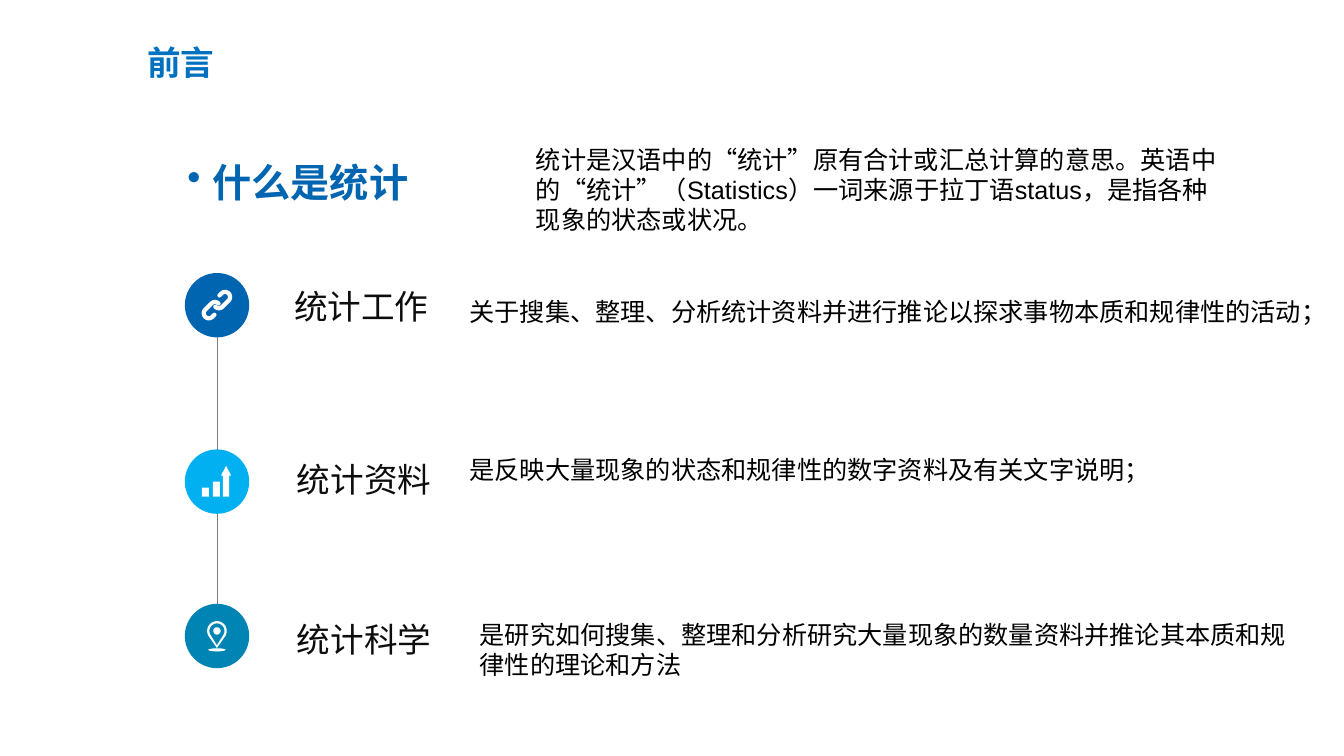
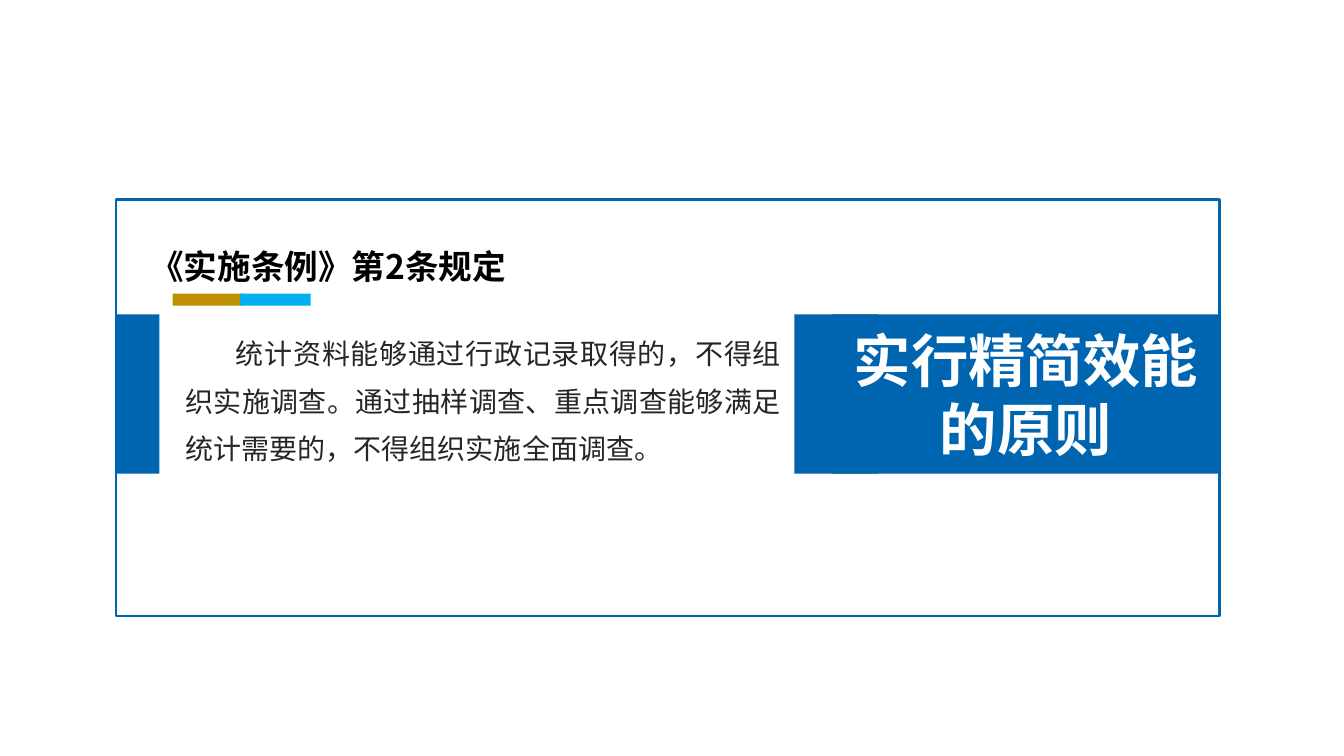
from dataclasses import dataclass
from math import cos, radians, sin
from typing import Callable

from lxml import etree
from pptx import Presentation
from pptx import util as u
from pptx.dml.color import RGBColor
from pptx.enum import shapes, text
from pptx.oxml import ns

Point = tuple[float, float]
Contour = list[Point]


@dataclass(frozen=True)
class Theme:
    blue: str = "0065B0"
    heading_blue: str = "0070C0"
    sky: str = "00B0F0"
    teal: str = "0084B4"
    gold: str = "BF9000"
    white: str = "FFFFFF"
    black: str = "000000"
    ink: str = "0D0D0D"
    soft_ink: str = "262626"
    grey: str = "808080"
    cjk_font: str = "Noto Sans CJK SC"
    latin_font: str = "Arial"
    body_size: float = 18
    article_size: float = 20
    label_size: float = 24
    topic_size: float = 28
    banner_size: float = 41


THEME = Theme()


@dataclass(frozen=True)
class Box:
    left: float
    top: float
    width: float
    height: float

    def lengths(self) -> list[u.Length]:
        return [u.Pt(v) for v in (self.left, self.top, self.width, self.height)]


@dataclass(frozen=True)
class TextStyle:
    size: float
    color: str
    bold: bool = False
    font: str = THEME.cjk_font
    align: text.PP_ALIGN = text.PP_ALIGN.LEFT
    line_spacing: float = 1.0
    left_margin: float = 0
    indent: float = 0
    bullet: str = ""
    wrap: bool = True
    grow: bool = True
    anchor: text.MSO_ANCHOR = text.MSO_ANCHOR.TOP
    inset: Point = (7.2, 3.6)


JUSTIFY = text.PP_ALIGN.JUSTIFY
MIDDLE = text.MSO_ANCHOR.MIDDLE
HEADING = TextStyle(THEME.label_size, THEME.heading_blue, bold=True)
TOPIC = TextStyle(THEME.topic_size, THEME.blue, bold=True, line_spacing=0.9,
                  left_margin=18, indent=-18, bullet="•", grow=False)
LABEL = TextStyle(THEME.label_size, THEME.ink, align=JUSTIFY, line_spacing=1.2)
LAST_LABEL = TextStyle(THEME.label_size, THEME.ink)
BODY = TextStyle(THEME.body_size, THEME.black, font=THEME.latin_font)
ONE_LINE = TextStyle(THEME.body_size, THEME.black, font=THEME.latin_font, wrap=False)
ARTICLE_TITLE = TextStyle(THEME.label_size, THEME.black, bold=True, align=JUSTIFY,
                          line_spacing=1.3, inset=(9.4, 4.3))
ARTICLE = TextStyle(THEME.article_size, THEME.soft_ink, align=JUSTIFY, line_spacing=1.4,
                    indent=36, grow=False, anchor=MIDDLE, inset=(9.4, 5))
BANNER = TextStyle(THEME.banner_size, THEME.white, bold=True, align=text.PP_ALIGN.CENTER,
                   grow=False, anchor=MIDDLE, inset=(0, 0))


def rgb(color: str) -> RGBColor:
    return RGBColor.from_string(color)


def write(shape, words: str, style: TextStyle) -> None:
    frame = shape.text_frame
    frame.word_wrap = style.wrap
    frame.auto_size = (text.MSO_AUTO_SIZE.SHAPE_TO_FIT_TEXT if style.grow
                       else text.MSO_AUTO_SIZE.NONE)
    frame.vertical_anchor = style.anchor
    frame.margin_left = frame.margin_right = u.Pt(style.inset[0])
    frame.margin_top = frame.margin_bottom = u.Pt(style.inset[1])

    para = frame.paragraphs[0]
    para.alignment = style.align
    para.line_spacing = style.line_spacing
    properties = para._p.get_or_add_pPr()
    properties.set("marL", str(u.Pt(style.left_margin)))
    properties.set("indent", str(u.Pt(style.indent)))
    if style.bullet:
        etree.SubElement(properties, ns.qn("a:buChar")).set("char", style.bullet)

    span = para.add_run()
    span.text = words
    span.font.size = u.Pt(style.size)
    span.font.bold = style.bold
    span.font.color.rgb = rgb(style.color)
    span.font.name = style.font
    east_asian = etree.SubElement(span._r.get_or_add_rPr(), ns.qn("a:ea"))
    east_asian.set("typeface", THEME.cjk_font)


def add_text(page, box: Box, words: str, style: TextStyle) -> None:
    write(page.shapes.add_textbox(*box.lengths()), words, style)


def paint(shape, fill: str = "", line: str = "", line_width: float = 1) -> None:
    """Apply plain fill and line; an empty colour means none."""
    shape.shadow.inherit = False
    if fill:
        shape.fill.solid()
        shape.fill.fore_color.rgb = rgb(fill)
    else:
        shape.fill.background()
    if line:
        shape.line.color.rgb = rgb(line)
        shape.line.width = u.Pt(line_width)
    else:
        shape.line.fill.background()


def add_block(page, box: Box, fill: str = "", line: str = "", line_width: float = 1,
              kind: shapes.MSO_SHAPE = shapes.MSO_SHAPE.RECTANGLE):
    block = page.shapes.add_shape(kind, *box.lengths())
    paint(block, fill, line, line_width)
    return block


def add_outline(page, center: Point, contours: list[Contour], close: bool = True):
    """Build one freeform from contours given relative to center."""
    placed = [[(u.Pt(center[0] + x), u.Pt(center[1] + y)) for x, y in contour]
              for contour in contours]
    builder = page.shapes.build_freeform(*placed[0][0], scale=1.0)
    for index, contour in enumerate(placed):
        if index:
            builder.move_to(*contour[0])
        builder.add_line_segments(contour[1:], close=close)
    return builder.convert_to_shape()


def arc(center: Point, radius_x: float, radius_y: float, start: int, end: int) -> Contour:
    """Points every 10 degrees, clockwise from the right."""
    return [(center[0] + radius_x * cos(radians(angle)),
             center[1] + radius_y * sin(radians(angle)))
            for angle in range(start, end + 1, 10)]


def draw_link(page, center: Point) -> None:
    lower = [(-1.8, 6.9), *arc((-5.8, 5.8), 3.6, 3.6, 45, 225),
             *arc((-1.4, 1.4), 3.6, 3.6, 225, 315)]
    upper = [(-x, -y) for x, y in lower]
    link = add_outline(page, center, [lower, upper], close=False)
    paint(link, line=THEME.white, line_width=3)
    outline = link.line._get_or_add_ln()
    outline.set("cap", "rnd")
    etree.SubElement(outline, ns.qn("a:round"))


def draw_growth(page, center: Point) -> None:
    base = 10.8
    bars = [[(left, top), (left + 5, top), (left + 5, base), (left, base)]
            for left, top in ((-10.8, 4.3), (-2.9, 0))]
    arrow = [(4.3, base), (4.3, -4.3), (2.9, -4.3), (6.5, -11.2),
             (10.1, -4.3), (8.7, -4.3), (8.7, base)]
    paint(add_outline(page, center, [*bars, arrow]), THEME.white)


def draw_pin(page, center: Point) -> None:
    head = (0, -3.6)
    contours = [
        [*arc(head, 7, 7, 150, 390), (0, 8.6)],
        [*arc(head, 5.4, 5.4, 150, 390), (0, 6.6)],
        arc(head, 2.6, 2.6, 0, 350),
        arc((0, 9.9), 6.2, 1.1, 0, 350),
    ]
    paint(add_outline(page, center, contours), THEME.white)


@dataclass(frozen=True)
class Meaning:
    label: str
    label_box: Box
    label_style: TextStyle
    disc_top: float
    color: str
    draw_icon: Callable
    detail: str
    detail_box: Box
    detail_style: TextStyle


DISC_SIZE = 46
DISC_LEFT = 132
MEANINGS = [
    Meaning("统计工作", Box(203, 195, 645, 42), LABEL, 195, THEME.blue, draw_link,
            "关于搜集、整理、分析统计资料并进行推论以探求事物本质和规律性的活动；",
            Box(328.3, 208, 626.4, 29), ONE_LINE),
    Meaning("统计资料", Box(205, 318.2, 651, 36), LABEL, 321, THEME.sky, draw_growth,
            "是反映大量现象的状态和规律性的数字资料及有关文字说明；",
            Box(328.3, 321, 500.4, 29), ONE_LINE),
    Meaning("统计科学", Box(205, 438.5, 639, 36), LAST_LABEL, 431.3, THEME.teal, draw_pin,
            "是研究如何搜集、整理和分析研究大量现象的数量资料并推论其本质和规律性的理论和方法",
            Box(335.5, 438.5, 594, 51), BODY),
]


def add_timeline(page) -> None:
    axis = DISC_LEFT + DISC_SIZE / 2
    line = page.shapes.add_connector(
        shapes.MSO_CONNECTOR.STRAIGHT, u.Pt(axis), u.Pt(MEANINGS[0].disc_top),
        u.Pt(axis), u.Pt(MEANINGS[-1].disc_top + DISC_SIZE))
    line.line.color.rgb = rgb(THEME.grey)
    line.line.width = u.Pt(0.5)
    etree.SubElement(line._element.spPr, ns.qn("a:effectLst"))

    for meaning in MEANINGS:
        add_text(page, meaning.label_box, meaning.label, meaning.label_style)
        add_block(page, Box(DISC_LEFT, meaning.disc_top, DISC_SIZE, DISC_SIZE),
                  meaning.color, kind=shapes.MSO_SHAPE.OVAL)
        meaning.draw_icon(page, (axis, meaning.disc_top + DISC_SIZE / 2))
        add_text(page, meaning.detail_box, meaning.detail, meaning.detail_style)


def build_preface(page) -> None:
    add_text(page, Box(98, 26.6, 414, 36), "前言", HEADING)
    add_text(page, Box(126.7, 113, 291, 44.6), "什么是统计", TOPIC)
    add_text(page, Box(375.8, 99.4, 501, 72.7),
             "统计是汉语中的“统计”原有合计或汇总计算的意思。英语中的“统计”"
             "（Statistics）一词来源于拉丁语status，是指各种现象的状态或状况。", BODY)
    add_timeline(page)


def build_principle(page) -> None:
    frame = Box(82.8, 142.6, 788.4, 297.4)
    band_top, band_height = 224.6, 113.8
    add_block(page, Box(frame.left, band_top, 31, band_height), THEME.blue)
    add_block(page, frame, line=THEME.blue, line_width=2)
    add_block(page, Box(567.4, band_top, 59.8, band_height), THEME.blue)
    banner = add_block(page, Box(594.7, band_top, 276.5, band_height), THEME.blue)
    write(banner, "实行精简效能的原则", BANNER)
    add_text(page, Box(123.1, 222.5, 444.2, 118),
             "统计资料能够通过行政记录取得的，不得组织实施调查。通过抽样调查、"
             "重点调查能够满足统计需要的，不得组织实施全面调查。", ARTICLE)
    add_text(page, Box(98, 162.7, 758, 43.2), "《实施条例》第2条规定", ARTICLE_TITLE)
    for left, color in ((123.3, THEME.gold), (171.4, THEME.sky)):
        add_block(page, Box(left, 209.7, 50.5, 8.6), color)


def main() -> None:
    deck = Presentation()
    deck.slide_width, deck.slide_height = u.Pt(960), u.Pt(540)
    blank = deck.slide_layouts[6]
    for build in (build_preface, build_principle):
        build(deck.slides.add_slide(blank))
    deck.save("out.pptx")


if __name__ == "__main__":
    main()
